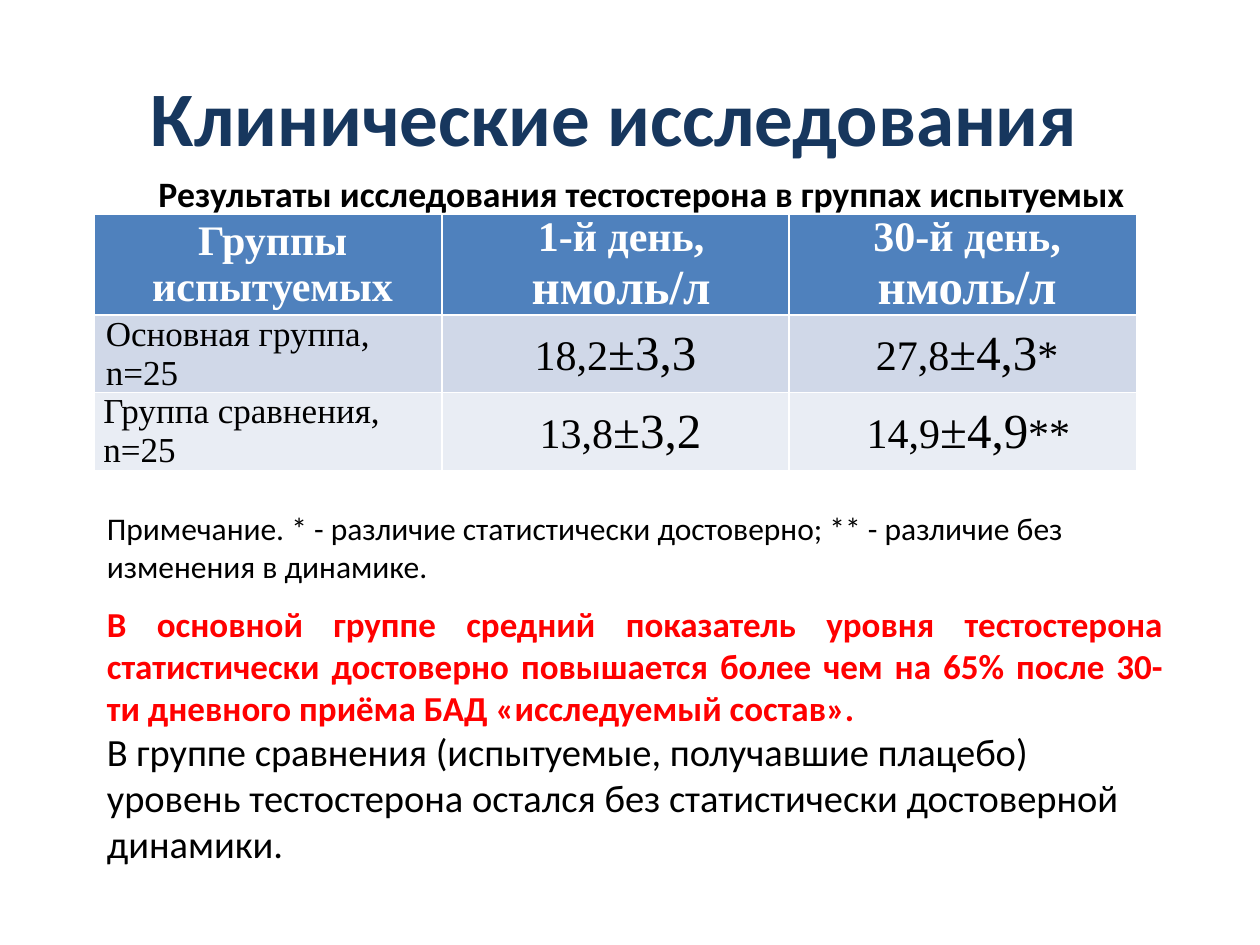
"""Build a slide with a testosterone study table and its conclusions."""
from pptx import Presentation
from pptx.dml.color import RGBColor as RGB
from pptx.enum.text import MSO_ANCHOR as ANCHOR, MSO_AUTO_SIZE as AUTO, PP_ALIGN as ALIGN
from pptx.oxml.ns import qn
from pptx.util import Inches, Pt

THEME = {
    "sans": "Calibri", "serif": "Times New Roman",
    "navy": RGB(0x17, 0x37, 0x5E), "black": RGB(0, 0, 0),
    "white": RGB(255, 255, 255), "red": RGB(255, 0, 0),
    "fills": [RGB(0x4F, 0x81, 0xBD), RGB(0xD0, 0xD8, 0xE8), RGB(0xE9, 0xED, 0xF4)],
    "title": 44, "subtitle": 20.4, "note": 18, "finding": 20, "control": 22,
    "label": 20, "cell": 24, "big": 28,
}


def apply(obj, **values):
    for name, value in values.items():
        setattr(obj, name, value)


def add_run(p, text, size, color="black", bold=False, face="sans"):
    r = p.add_run()
    r.text = text
    apply(r.font, size=Pt(THEME[size]), bold=bold, name=THEME[face])
    r.font.color.rgb = THEME[color]


prs = Presentation()
apply(prs, slide_width=Inches(10), slide_height=Inches(7.5))
s = prs.slides.add_slide(prs.slide_layouts[1])

headings = [
    (s.shapes.title, (0.59, 0.29, 8.58, 1.25), ANCHOR.MIDDLE,
     "Клинические исследования", "title", "navy"),
    (s.placeholders[1], (0.59, 1.31, 9, 0.71), ANCHOR.TOP,
     "Результаты исследования тестостерона в группах испытуемых", "subtitle", "black"),
]
for sp, box, anchor, text, size, color in headings:
    apply(sp, **dict(zip(("left", "top", "width", "height"), map(Inches, box))))
    tf = sp.text_frame
    apply(tf, auto_size=AUTO.NONE, word_wrap=True, vertical_anchor=anchor)
    p = tf.paragraphs[0]
    p.alignment = ALIGN.CENTER
    pPr = p._p.get_or_add_pPr()
    pPr.set("marL", "0")
    pPr.set("indent", "0")
    pPr.append(pPr.makeelement(qn("a:buNone"), {}))
    add_run(p, text, size, color, bold=True)

rows = [
    [(0.07, [[("Группы испытуемых", "cell")]]),
     (0.09, [[("1-й день,", "cell")], [("нмоль/л", "big")]]),
     (0.07, [[("30-й день,", "cell")], [("нмоль/л", "big")]])],
    [(0.09, [[("Основная группа, n=25", "label")]]),
     (0, [[("18,2", "cell"), ("±3,3", "big")]]),
     (0.07, [[("27,8", "cell"), ("±4,3", "big"), ("*", "cell")]])],
    [(0.07, [[("Группа сравнения, n=25", "label")]]),
     (0.08, [[("13,8", "cell"), ("±3,2", "big")]]),
     (0.09, [[("14,9", "cell"), ("±4,9", "big"), ("**", "cell")]])],
]
heights = [0.79, 0.61, 0.61]
table = s.shapes.add_table(3, 3, Inches(0.75), Inches(1.7),
                           Inches(8.27), Inches(sum(heights))).table
for col in table.columns:
    col.width = Inches(8.27 / 3)
for i, row in enumerate(rows):
    table.rows[i].height = Inches(heights[i])
    for j, (indent, paragraphs) in enumerate(row):
        cell = table.cell(i, j)
        apply(cell, margin_left=0, margin_right=0, margin_top=0, margin_bottom=0,
              vertical_anchor=ANCHOR.MIDDLE)
        cell.fill.solid()
        cell.fill.fore_color.rgb = THEME["fills"][i]
        tf = cell.text_frame
        for k, runs in enumerate(paragraphs):
            p = tf.add_paragraph() if k else tf.paragraphs[0]
            p.alignment = ALIGN.LEFT if i and not j else ALIGN.CENTER
            p._p.get_or_add_pPr().set("marL", str(Inches(indent)))
            for text, size in runs:
                add_run(p, text, size, "black" if i else "white", not i, "serif")

notes = [
    ("Примечание. * - различие статистически достоверно; ** - различие без "
     "изменения в динамике.", "note", "black", False, ALIGN.LEFT, 10),
    ("В основной группе средний показатель уровня тестостерона статистически "
     "достоверно повышается более чем на 65% после 30-ти дневного приёма БАД "
     "«исследуемый состав».", "finding", "red", True, ALIGN.JUSTIFY, 0),
    ("В группе сравнения (испытуемые, получавшие плацебо) уровень тестостерона "
     "остался без статистически достоверной динамики.",
     "control", "black", False, ALIGN.LEFT, 0),
]
tf = s.shapes.add_textbox(Inches(0.75), Inches(3.99), Inches(8.58), Inches(2.96)).text_frame
tf.word_wrap = True
for k, (text, size, color, bold, align, after) in enumerate(notes):
    p = tf.add_paragraph() if k else tf.paragraphs[0]
    apply(p, alignment=align, space_after=Pt(after))
    add_run(p, text, size, color, bold)

prs.save("out.pptx")
